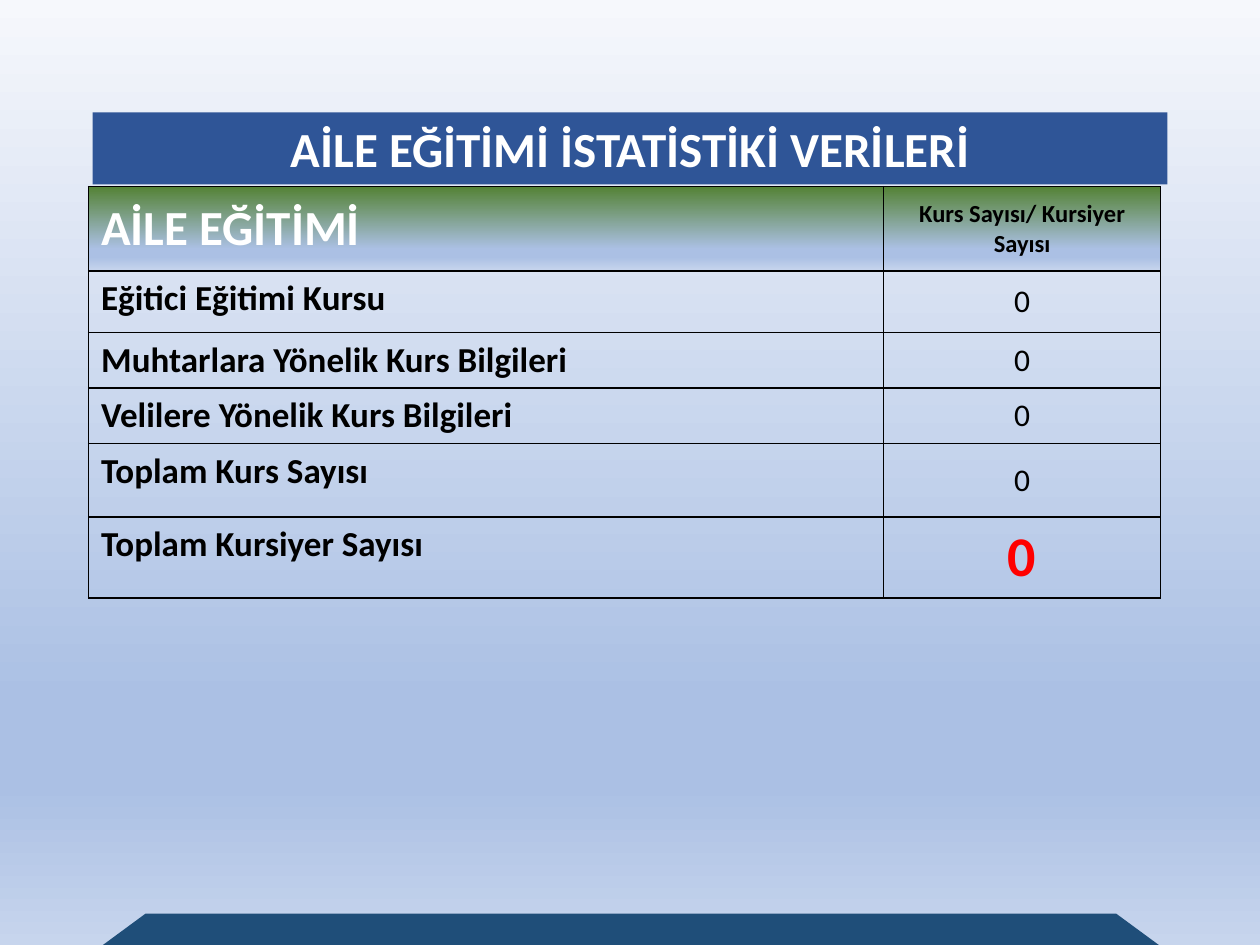
"""Build the family education statistics slide."""
from typing import NamedTuple

from lxml.etree import SubElement
from pptx import Presentation
from pptx.dml.color import RGBColor
from pptx.enum.shapes import MSO_SHAPE as Shape
from pptx.enum.text import MSO_ANCHOR as Anchor, MSO_AUTO_SIZE as Auto, PP_ALIGN as Align
from pptx.oxml.ns import qn
from pptx.util import Pt

FADE = ((74, "ABC0E4"), (83, "ABC0E4"), (100, "C7D5ED"))
WIDTHS = (454.3, 158.4)


class Style(NamedTuple):
    size: float
    color: str = "000000"
    bold: bool = True
    align: Align = Align.LEFT
    anchor: Anchor = Anchor.MIDDLE


class Row(NamedTuple):
    height: float
    label: str
    value: str
    left: Style
    right: Style
    head: bool = False


HEAD = Style(28, "FFFFFF")
NAME = Style(20, anchor=Anchor.TOP)
COUNT = Style(18, bold=False, align=Align.CENTER)
ROWS = (
    Row(48.2, "AİLE EĞİTİMİ", "Kurs Sayısı/ Kursiyer Sayısı",
        HEAD, Style(14, align=Align.CENTER), True),
    Row(35.3, "Eğitici Eğitimi Kursu", "0", NAME, COUNT),
    Row(30.2, "Muhtarlara Yönelik Kurs Bilgileri", "0", NAME, COUNT),
    Row(31.7, "Velilere Yönelik Kurs Bilgileri", "0", NAME, COUNT),
    Row(41.8, "Toplam Kurs Sayısı", "0", NAME, COUNT),
    Row(41.8, "Toplam Kursiyer Sayısı", "0", NAME,
        Style(32, "FF0000", align=Align.CENTER)),
)


def rgb(color: str) -> RGBColor:
    return RGBColor.from_string(color)


def write(frame, text: str, style: Style) -> None:
    frame.text = text
    para = frame.paragraphs[0]
    para.alignment = style.align
    font = para.font
    font.name, font.size, font.bold = "Calibri", Pt(style.size), style.bold
    font.color.rgb = rgb(style.color)


def fade(props, top: str) -> None:
    """Swap the solid fill in props for a downward gradient."""
    solid = props.find(qn("a:solidFill"))
    grad = props.makeelement(qn("a:gradFill"), {"rotWithShape": "1"})
    stops = SubElement(grad, qn("a:gsLst"))
    for pos, color in ((0, top), *FADE):
        stop = SubElement(stops, qn("a:gs"), pos=str(pos * 1000))
        SubElement(stop, qn("a:srgbClr"), val=color)
    SubElement(grad, qn("a:lin"), ang="5400000", scaled="0")
    props.replace(solid, grad)


def border(props) -> None:
    for side in ("L", "R", "T", "B"):
        line = SubElement(props, qn(f"a:ln{side}"), w=str(Pt(1)))
        fill = SubElement(line, qn("a:solidFill"))
        SubElement(fill, qn("a:srgbClr"), val="000000")


def draw_cell(cell, text: str, style: Style, head: bool) -> None:
    write(cell.text_frame, text, style)
    cell.vertical_anchor = style.anchor
    props = cell._tc.get_or_add_tcPr()
    border(props)
    if head:
        cell.fill.solid()
        fade(props, "548235")
    else:
        cell.fill.background()


def draw_table(slide) -> None:
    high = sum(row.height for row in ROWS)
    table = slide.shapes.add_table(len(ROWS), len(WIDTHS), Pt(50.6), Pt(106.6),
                                   Pt(sum(WIDTHS)), Pt(high)).table
    table.first_row = table.horz_banding = False
    for col, width in zip(table.columns, WIDTHS):
        col.width = Pt(width)
    for num, row in enumerate(ROWS):
        table.rows[num].height = Pt(row.height)
        draw_cell(table.cell(num, 0), row.label, row.left, row.head)
        draw_cell(table.cell(num, 1), row.value, row.right, row.head)


def draw_title(slide) -> None:
    title = slide.shapes.title
    title.left, title.top, title.width, title.height = map(Pt, (52.9, 64.2, 614.2, 41.2))
    title.fill.solid()
    title.fill.fore_color.rgb = rgb("2F5597")
    frame = title.text_frame
    frame.auto_size = Auto.NONE
    frame.vertical_anchor = Anchor.MIDDLE
    write(frame, "AİLE EĞİTİMİ İSTATİSTİKİ VERİLERİ", HEAD._replace(align=Align.CENTER))


def draw_foot(slide) -> None:
    foot = slide.shapes.add_shape(Shape.TRAPEZOID, Pt(58.8), Pt(522), Pt(603.4), Pt(18))
    foot.adjustments[0] = 1.36
    foot.shadow.inherit = False
    foot.fill.solid()
    foot.fill.fore_color.rgb = rgb("1F4E79")
    foot.line.fill.background()


def main() -> None:
    deck = Presentation()
    deck.slide_width, deck.slide_height = Pt(720), Pt(540)
    slide = deck.slides.add_slide(deck.slide_layouts[5])
    slide.background.fill.solid()
    fade(slide.element.find(f".//{qn('p:bgPr')}"), "F6F8FC")
    draw_foot(slide)
    draw_title(slide)
    draw_table(slide)
    deck.save("out.pptx")


if __name__ == "__main__":
    main()
